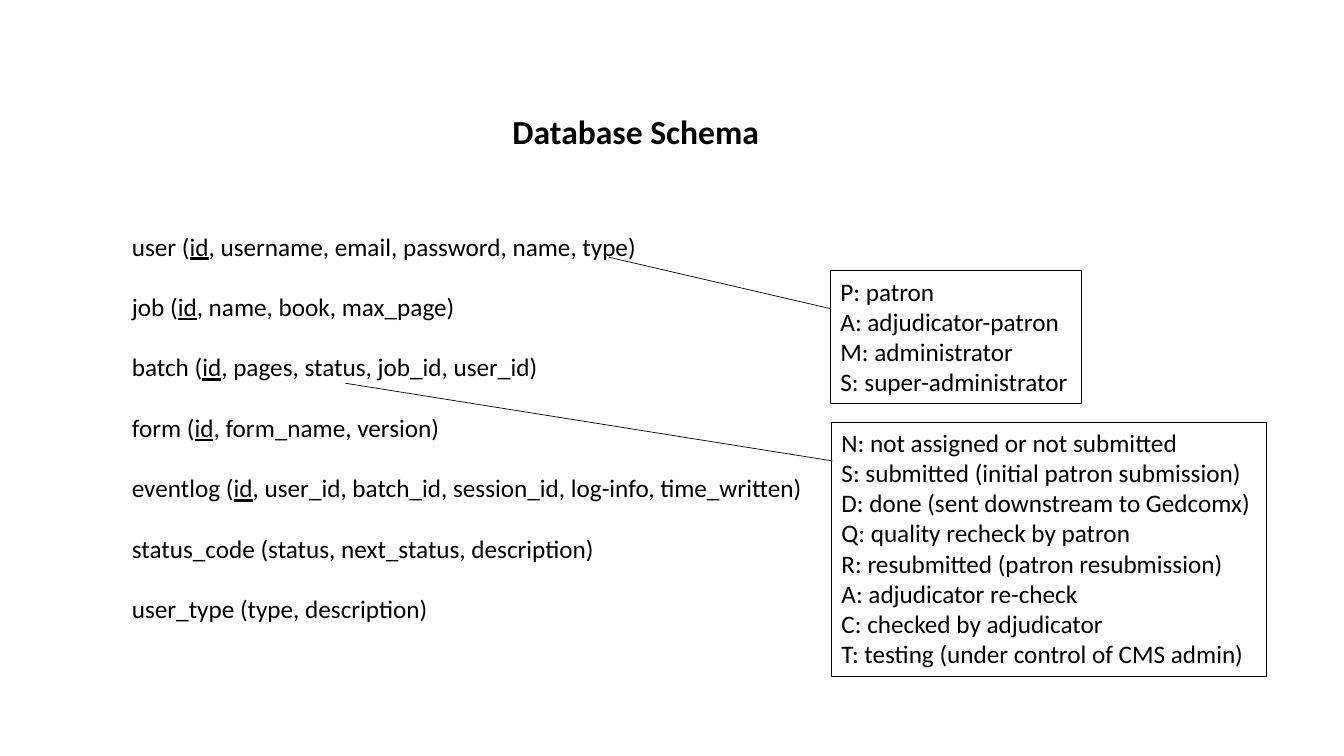
import dataclasses

import lxml.etree
import pptx
import pptx.dml.color
import pptx.enum.shapes
import pptx.enum.text
import pptx.oxml.ns
import pptx.util

PX = 9525
BLACK = pptx.dml.color.RGBColor(0, 0, 0)
WHITE = pptx.dml.color.RGBColor(255, 255, 255)
FONT = "Calibri"
LEFT = pptx.enum.text.PP_ALIGN.LEFT
MID = pptx.enum.text.PP_ALIGN.CENTER


@dataclasses.dataclass(frozen=True)
class Box:
    left: int
    top: int
    width: int
    height: int


@dataclasses.dataclass(frozen=True)
class Table:
    name: str
    key: str
    rest: str


@dataclasses.dataclass(frozen=True)
class Legend:
    box: Box
    lines: tuple[str, ...]
    start: tuple[int, int]
    end: tuple[int, int]


TITLE = Box(477, 101, 257, 48)
BODY = Box(116, 215, 665, 388)

TABLES = (
    Table("user", "id", ", username, email, password, name, type"),
    Table("job", "id", ", name, book, max_page"),
    Table("batch", "id", ", pages, status, job_id, user_id"),
    Table("form", "id", ", form_name, version"),
    Table("eventlog", "id", ", user_id, batch_id, session_id, log-info, time_written"),
    Table("status_code", "", "status, next_status, description"),
    Table("user_type", "", "type, description"),
)

LEGENDS = (
    Legend(
        Box(791, 258, 239, 126),
        (
            "P: patron",
            "A: adjudicator-patron",
            "M: administrator",
            "S: super-administrator",
        ),
        (580, 245),
        (791, 294),
    ),
    Legend(
        Box(792, 402, 414, 242),
        (
            "N: not assigned or not submitted",
            "S: submitted (initial patron submission)",
            "D: done (sent downstream to Gedcomx)",
            "Q: quality recheck by patron",
            "R: resubmitted (patron resubmission)",
            "A: adjudicator re-check",
            "C: checked by adjudicator",
            "T: testing (under control of CMS admin)",
        ),
        (329, 365),
        (793, 439),
    ),
)


def place(shape, box: Box) -> None:
    shape.left, shape.top, shape.width, shape.height = (
        side * PX for side in dataclasses.astuple(box)
    )


def style(para, size: int, bold: bool = False, align=LEFT, gap: float = 0) -> None:
    para.alignment = align
    para.space_before = pptx.util.Pt(0)
    para.space_after = pptx.util.Pt(gap)
    para.font.name = FONT
    para.font.size = pptx.util.Pt(size)
    para.font.bold = bold
    para.font.color.rgb = BLACK


def prep(frame) -> None:
    frame.word_wrap = True
    frame.auto_size = pptx.enum.text.MSO_AUTO_SIZE.NONE
    frame.vertical_anchor = pptx.enum.text.MSO_ANCHOR.TOP


def add_title(slide) -> None:
    title = slide.shapes.title
    place(title, TITLE)
    prep(title.text_frame)
    title.text_frame.text = "Database Schema"
    style(title.text_frame.paragraphs[0], 24, True, MID)


def add_body(slide) -> None:
    body = slide.placeholders[1]
    place(body, BODY)
    frame = body.text_frame
    prep(frame)
    for num, table in enumerate(TABLES):
        para = frame.add_paragraph() if num else frame.paragraphs[0]
        style(para, 18, gap=21.6)
        props = para._p.get_or_add_pPr()
        props.set("marL", "0")
        props.set("indent", "0")
        bullet = lxml.etree.Element(pptx.oxml.ns.qn("a:buNone"))
        props.find(pptx.oxml.ns.qn("a:spcAft")).addnext(bullet)
        para.add_run().text = f"{table.name} ("
        if table.key:
            key = para.add_run()
            key.text = table.key
            key.font.underline = True
        para.add_run().text = f"{table.rest})"


def add_legend(slide, legend: Legend) -> None:
    shape = slide.shapes.add_shape(
        pptx.enum.shapes.MSO_SHAPE.RECTANGLE, 0, 0, PX, PX
    )
    place(shape, legend.box)
    shape.shadow.inherit = False
    shape.fill.background()
    shape.line.color.rgb = BLACK
    shape.line.width = pptx.util.Pt(0.75)
    frame = shape.text_frame
    prep(frame)
    frame.text = "\n".join(legend.lines)
    for para in frame.paragraphs:
        style(para, 18)

    ends = (side * PX for side in legend.start + legend.end)
    link = slide.shapes.add_connector(
        pptx.enum.shapes.MSO_CONNECTOR.STRAIGHT, *ends
    )
    link.line.color.rgb = BLACK
    link.line.width = pptx.util.Pt(0.5)
    lxml.etree.SubElement(
        link._element.spPr, pptx.oxml.ns.qn("a:effectLst")
    )


def main() -> None:
    deck = pptx.Presentation()
    deck.slide_width = 1280 * PX
    deck.slide_height = 720 * PX
    slide = deck.slides.add_slide(deck.slide_layouts[1])
    slide.background.fill.solid()
    slide.background.fill.fore_color.rgb = WHITE
    add_title(slide)
    add_body(slide)
    for legend in LEGENDS:
        add_legend(slide, legend)
    deck.save("out.pptx")


if __name__ == "__main__":
    main()
